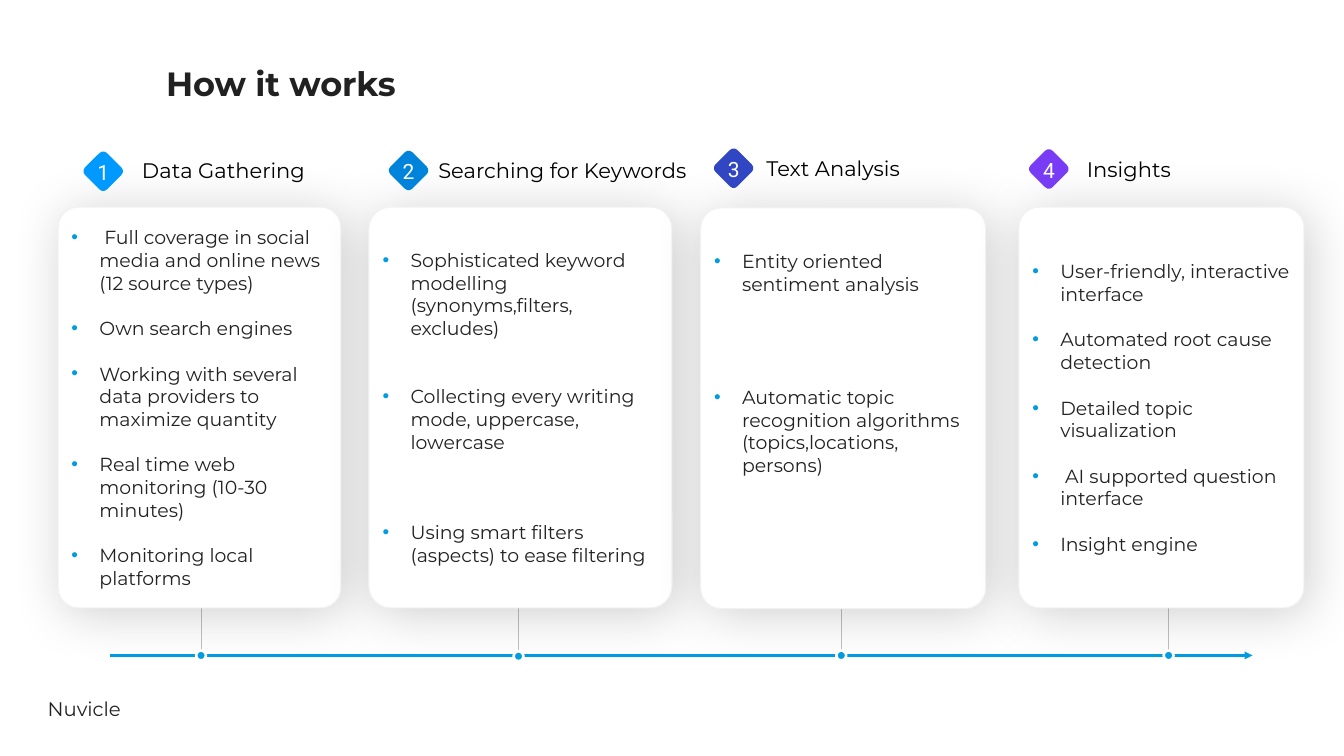
from dataclasses import dataclass

from lxml.etree import SubElement as Sub
from pptx import Presentation
from pptx.dml.color import RGBColor as Rgb
from pptx.enum.shapes import MSO_CONNECTOR as Conn, MSO_SHAPE as Kind
from pptx.enum.text import MSO_ANCHOR as Anchor, PP_ALIGN as Align
from pptx.oxml.ns import qn
from pptx.util import Inches, Pt


@dataclass(frozen=True)
class Theme:
    sans: str = "Montserrat"
    digit: str = "Roboto"
    ink: str = "222222"
    title: str = "212121"
    black: str = "000000"
    white: str = "FFFFFF"
    edge: str = "F2F2F2"
    stem: str = "BFBFBF"
    blue: str = "009CDF"
    big: float = 32
    head: float = 20
    body: float = 18
    foot: float = 18.7
    line: float = 21.6


@dataclass(frozen=True)
class Step:
    head: str
    hue: str
    card: tuple[float, float, float]  # left, top, width
    badge: tuple[float, float]
    label: tuple[float, float, float]  # left, top, width
    dot: tuple[float, float]  # centre
    items: tuple[str, ...]
    gaps: tuple[int, ...]  # free lines above each item
    rest: int = 0  # free lines below the last item


T = Theme()
CARD_H, BADGE, DOT, AXIS = 5.3, 0.41, 0.13, 8.67

STEPS = [
    Step("Data Gathering", "0099FF", (0.77, 2.74, 3.74), (1.16, 2.06),
         (1.78, 2.04, 2.55), (2.66, 8.67),
         (" Full coverage in social media and online news (12 source types)",
          "Own search engines",
          "Working with several data providers to maximize quantity",
          "Real time web monitoring (10-30 minutes)",
          "Monitoring local platforms"), (0, 1, 1, 1, 1)),
    Step("Searching for Keywords", "0083DA", (4.88, 2.74, 4.01), (5.2, 2.05),
         (5.7, 2.04, 3.74), (6.86, 8.68),
         ("Sophisticated keyword modelling (synonyms,filters, excludes)",
          "Collecting every writing mode, uppercase, lowercase",
          "Using smart filters (aspects) to ease filtering"), (0, 2, 3)),
    Step("Text Analysis", "3046C2", (9.27, 2.75, 3.77), (9.5, 2.02),
         (10.04, 2.01, 2.57), (11.13, 8.67),
         ("Entity oriented sentiment analysis",
          "Automatic topic recognition algorithms (topics,locations, persons)"),
         (0, 4), 4),
    Step("Insights", "783CF5", (13.48, 2.74, 3.77), (13.67, 2.03),
         (14.28, 2.02, 2.5), (15.46, 8.67),
         ("User-friendly, interactive interface",
          "Automated root cause detection",
          "Detailed topic visualization",
          " AI supported question interface",
          "Insight engine"), (0, 1, 1, 1, 1)),
]


def style(para, size: float, hue: str, face: str = T.sans) -> None:
    para.font.size = Pt(size)
    para.font.name = face
    para.font.color.rgb = Rgb.from_string(hue)


def text(slide, box: tuple, words: str, size: float, hue: str,
         face: str = T.sans, anchor=Anchor.TOP, wrap: bool = True):
    frame = slide.shapes.add_textbox(*map(Inches, box)).text_frame
    frame.word_wrap = wrap
    frame.vertical_anchor = anchor
    para = frame.paragraphs[0]
    para.text = words
    style(para, size, hue, face)
    return frame


def shape(slide, kind, box: tuple, fill: str, edge: str = "", width: float = 0):
    part = slide.shapes.add_shape(kind, *map(Inches, box))
    part.shadow.inherit = False
    part.fill.solid()
    part.fill.fore_color.rgb = Rgb.from_string(fill)
    if edge:
        part.line.color.rgb = Rgb.from_string(edge)
        part.line.width = Pt(width)
    else:
        part.line.fill.background()
    return part


def line(slide, start: tuple, end: tuple, hue: str, width: float):
    part = slide.shapes.add_connector(Conn.STRAIGHT, *map(Inches, start + end))
    part.line.color.rgb = Rgb.from_string(hue)
    part.line.width = Pt(width)
    Sub(part._element.spPr, qn("a:effectLst"))
    return part


def shade(part) -> None:
    fx = part._element.spPr.find(qn("a:effectLst"))
    glow = Sub(fx, qn("a:outerShdw"), blurRad=str(Pt(50)), dist=str(Pt(6)),
               dir=str(45 * 60000), algn="tl", rotWithShape="0")
    hue = Sub(glow, qn("a:srgbClr"), val=T.black)
    Sub(hue, qn("a:alpha"), val="18000")


def bullet(para) -> None:
    props = para._p.get_or_add_pPr()
    props.set("marL", str(Inches(0.37)))
    props.set("indent", str(Inches(-0.37)))
    Sub(Sub(props, qn("a:buClr")), qn("a:srgbClr"), val=T.blue)
    Sub(props, qn("a:buFont"), typeface="Arial")
    Sub(props, qn("a:buChar"), char="•")


def card(slide, step: Step) -> None:
    part = shape(slide, Kind.ROUNDED_RECTANGLE, (*step.card, CARD_H),
                 T.white, T.edge, 1)
    part.adjustments[0] = 0.071
    shade(part)
    frame = part.text_frame
    frame.word_wrap = True
    frame.vertical_anchor = Anchor.MIDDLE
    frame.margin_bottom = Inches(0.05) + Pt(step.rest * T.line)
    for i, (item, gap) in enumerate(zip(step.items, step.gaps)):
        para = frame.add_paragraph() if i else frame.paragraphs[0]
        para.text = item
        para.alignment = Align.LEFT
        bullet(para)
        if gap:
            para.space_before = Pt(gap * T.line)
        style(para, T.body, T.ink)


def badge(slide, step: Step, num: int) -> None:
    left, top = step.badge
    part = shape(slide, Kind.ROUNDED_RECTANGLE, (left, top, BADGE, BADGE), step.hue)
    part.rotation = 45
    text(slide, (left + 0.03, top, 0.36, 0.44), str(num), T.head, T.white,
         T.digit, wrap=False)
    text(slide, (*step.label, 0.44), step.head, T.head, T.black)


def main() -> None:
    deck = Presentation()
    deck.slide_width, deck.slide_height = Inches(17.78), Inches(10)
    slide = deck.slides.add_slide(deck.slide_layouts[6])

    # Footer and title
    foot = text(slide, (0.5, 9.11, 6.29, 0.53), "Nuvicle", T.foot, T.ink,
                anchor=Anchor.MIDDLE)
    foot.margin_left = foot.margin_right = Inches(0.13)
    foot.margin_top = foot.margin_bottom = Inches(0.07)
    head = text(slide, (2.1, 0.81, 14.45, 0.65), "How it works", T.big, T.title,
                anchor=Anchor.MIDDLE).paragraphs[0]
    head.line_spacing = 0.9
    head.font.bold = True
    head.runs[0]._r.get_or_add_rPr().set("spc", "-10")

    # Stems, tucked behind the cards
    for step in STEPS:
        x, y = step.dot
        line(slide, (x, 7.5), (x, y), T.stem, 0.75)

    # Cards with numbered headings
    for num, step in enumerate(STEPS, 1):
        card(slide, step)
        badge(slide, step, num)

    # Time axis and its dots
    axis = line(slide, (1.45, AXIS), (16.57, AXIS), T.blue, 2.5)
    Sub(axis.line._get_or_add_ln(), qn("a:tailEnd"), type="triangle")
    for step in STEPS:
        x, y = step.dot
        shape(slide, Kind.OVAL, (x - DOT / 2, y - DOT / 2, DOT, DOT),
              T.blue, T.white, 2.5)

    deck.save("out.pptx")


if __name__ == "__main__":
    main()
